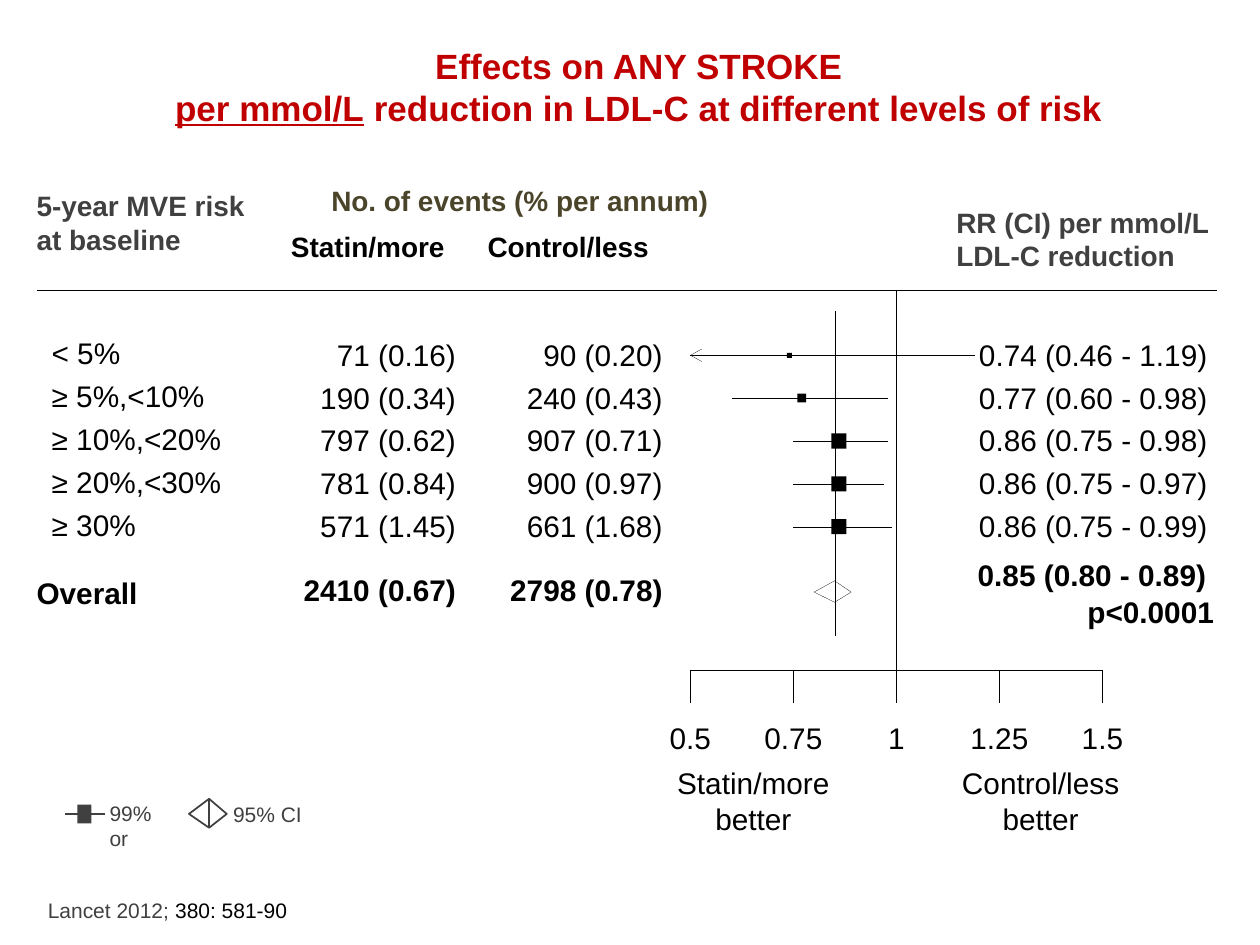
"""Build a forest plot slide on stroke risk per mmol/L LDL-C reduction."""

from dataclasses import dataclass
from typing import Optional

import pptx
import pptx.dml.color
import pptx.enum.dml
import pptx.enum.shapes
import pptx.enum.text
import pptx.oxml.ns
import pptx.util
from lxml import etree
from pptx.util import Inches

BLACK, GREY, RED, OLIVE = "000000", "404040", "C00000", "4A452A"
HAIRLINE = 0.13
LEFT = pptx.enum.text.PP_ALIGN.LEFT
CENTER = pptx.enum.text.PP_ALIGN.CENTER
RIGHT = pptx.enum.text.PP_ALIGN.RIGHT

AXIS_LEFT, AXIS_SPAN, AXIS_Y = 5.48, 3.27, 5.32
FIRST_ROW, ROW_STEP = 2.67, 0.34
HEADER_Y, OVERALL_Y = 2.3, 4.7


@dataclass
class Label:
    text: str
    left: float
    top: float
    width: float
    size: float = 17
    color: str = BLACK
    bold: bool = False
    align: pptx.enum.text.PP_ALIGN = LEFT


@dataclass
class RiskGroup:
    name: str
    statin: str
    control: str
    ratio: float
    low: float
    high: float
    marker: float


LABELS = [
    Label("5-year MVE risk\nat baseline", 0.29, 1.5, 1.9, 16, GREY, True),
    Label("No. of events (% per annum)", 2.63, 1.46, 3.2, 16, OLIVE, True),
    Label("Statin/more", 2.31, 1.82, 1.4, 16, BLACK, True),
    Label("Control/less", 3.87, 1.82, 1.4, 16, BLACK, True),
    Label("RR (CI) per mmol/L\nLDL-C reduction", 7.59, 1.63, 2.2, 16, GREY, True),
    Label("Overall", 0.29, 4.56, 1, bold=True),
    Label("2410 (0.67)", 2.12, 4.54, 1.5, bold=True, align=RIGHT),
    Label("2798 (0.78)", 3.76, 4.54, 1.5, bold=True, align=RIGHT),
    Label("0.85 (0.80 - 0.89)", 7.76, 4.42, 2, bold=True),
    Label("p<0.0001", 8.63, 4.71, 1.2, bold=True),
    Label("Statin/more\nbetter", 5.23, 6.07, 1.5, align=CENTER),
    Label("Control/less\nbetter", 7.51, 6.07, 1.5, align=CENTER),
    Label("99%\vor", 0.87, 6.35, 0.5, 12, GREY),
    Label("95% CI", 1.85, 6.36, 0.7, 12, GREY),
]

RISK_GROUPS = [
    RiskGroup("< 5%", "71 (0.16)", "90 (0.20)", 0.74, 0.46, 1.19, 0.04),
    RiskGroup("≥ 5%,<10%", "190 (0.34)", "240 (0.43)", 0.77, 0.60, 0.98, 0.07),
    RiskGroup("≥ 10%,<20%", "797 (0.62)", "907 (0.71)", 0.86, 0.75, 0.98, 0.12),
    RiskGroup("≥ 20%,<30%", "781 (0.84)", "900 (0.97)", 0.86, 0.75, 0.97, 0.12),
    RiskGroup("≥ 30%", "571 (1.45)", "661 (1.68)", 0.86, 0.75, 0.99, 0.12),
]


def rgb(color: str) -> pptx.dml.color.RGBColor:
    return pptx.dml.color.RGBColor.from_string(color)


def ratio_x(ratio: float) -> float:
    return AXIS_LEFT + (ratio - 0.5) * AXIS_SPAN


def format_run(run, size: float, color: str, bold: bool = False) -> None:
    run.font.name = "Arial"
    run.font.size = pptx.util.Pt(size)
    run.font.bold = bold
    run.font.color.rgb = rgb(color)


def draw_label(slide, label: Label):
    box = slide.shapes.add_textbox(
        Inches(label.left), Inches(label.top), Inches(label.width), Inches(0.29)
    )
    frame = box.text_frame
    frame.word_wrap = True
    frame.margin_left = frame.margin_right = frame.margin_top = frame.margin_bottom = 0
    frame.text = label.text
    for paragraph in frame.paragraphs:
        paragraph.alignment = label.align
        for run in paragraph.runs:
            format_run(run, label.size, label.color, label.bold)
    return frame


def draw_line(slide, x1: float, y1: float, x2: float, y2: float,
              color: str = BLACK, width: float = HAIRLINE):
    line = slide.shapes.add_connector(
        pptx.enum.shapes.MSO_CONNECTOR.STRAIGHT,
        Inches(x1), Inches(y1), Inches(x2), Inches(y2),
    )
    line.line.color.rgb = rgb(color)
    line.line.width = pptx.util.Pt(width)
    properties = line.element.find(pptx.oxml.ns.qn("p:spPr"))
    etree.SubElement(properties, pptx.oxml.ns.qn("a:effectLst"))
    return line


def draw_outline(slide, points: list[tuple[float, float]], closed: bool,
                 color: str = BLACK, width: float = HAIRLINE) -> None:
    corners = [(Inches(x), Inches(y)) for x, y in points]
    builder = slide.shapes.build_freeform(*corners[0])
    builder.add_line_segments(corners[1:], close=closed)
    outline = builder.convert_to_shape()
    outline.shadow.inherit = False
    outline.fill.background()
    outline.line.color.rgb = rgb(color)
    outline.line.width = pptx.util.Pt(width)


def draw_marker(slide, x: float, y: float, width: float,
                color: str = BLACK, height: Optional[float] = None) -> None:
    height = height or width
    marker = slide.shapes.add_shape(
        pptx.enum.shapes.MSO_SHAPE.RECTANGLE,
        Inches(x - width / 2), Inches(y - height / 2), Inches(width), Inches(height),
    )
    marker.shadow.inherit = False
    marker.fill.solid()
    marker.fill.fore_color.rgb = rgb(color)
    marker.line.fill.background()


def draw_title(slide) -> None:
    title = slide.shapes.title
    title.left, title.top = Inches(0.57), Inches(0.3)
    title.width, title.height = Inches(9), Inches(1.25)
    title.text_frame.vertical_anchor = pptx.enum.text.MSO_ANCHOR.TOP
    heading = title.text_frame.paragraphs[0]
    heading.text = "Effects on ANY STROKE\vper mmol/L"
    heading.alignment = CENTER
    heading.add_run().text = " reduction in LDL-C at different levels of risk"
    for run in heading.runs:
        format_run(run, 20, RED, True)
    heading.runs[1].font.underline = True


def draw_group(slide, group: RiskGroup, top: float) -> None:
    middle = top + 0.15
    estimate = f"{group.ratio:.2f} ({group.low:.2f} - {group.high:.2f})"
    draw_label(slide, Label(group.name, 0.41, top - 0.01, 1.6))
    draw_label(slide, Label(group.statin, 2.12, top, 1.5, align=RIGHT))
    draw_label(slide, Label(group.control, 3.76, top, 1.5, align=RIGHT))
    draw_label(slide, Label(estimate, 7.77, top, 2))
    start = max(ratio_x(group.low), AXIS_LEFT)
    draw_line(slide, start, middle, ratio_x(group.high), middle)
    if group.low < 0.5:
        barbs = [(start + 0.09, middle - 0.05), (start, middle), (start + 0.09, middle + 0.05)]
        draw_outline(slide, barbs, closed=False)
    draw_marker(slide, ratio_x(group.ratio), middle, group.marker)


def draw_axis(slide) -> None:
    draw_line(slide, 0.29, HEADER_Y, 9.66, HEADER_Y)
    draw_line(slide, ratio_x(1), 5.45, ratio_x(1), HEADER_Y)
    draw_line(slide, AXIS_LEFT, AXIS_Y, AXIS_LEFT + AXIS_SPAN, AXIS_Y)
    for ratio in (0.5, 0.75, 1, 1.25, 1.5):
        x = ratio_x(ratio)
        draw_line(slide, x, AXIS_Y, x, AXIS_Y + 0.26)
        draw_label(slide, Label(str(ratio), x - 0.4, 5.71, 0.8, align=CENTER))


def draw_overall(slide) -> None:
    x = ratio_x(0.85)
    diamond = [(ratio_x(0.8), OVERALL_Y), (x, OVERALL_Y - 0.09),
               (ratio_x(0.89), OVERALL_Y), (x, OVERALL_Y + 0.08)]
    draw_outline(slide, diamond, closed=True)
    overall_line = draw_line(slide, x, 2.47, x, 5.04)
    overall_line.line.dash_style = pptx.enum.dml.MSO_LINE.SQUARE_DOT


def draw_legend(slide) -> None:
    draw_marker(slide, 0.67, 6.46, 0.11, GREY, 0.15)
    draw_line(slide, 0.52, 6.46, 0.83, 6.46, GREY, 1)
    diamond = [(1.66, 6.34), (1.5, 6.46), (1.66, 6.57), (1.8, 6.46)]
    draw_outline(slide, diamond, True, GREY, 1)
    draw_line(slide, 1.66, 6.57, 1.66, 6.34, GREY, 1)


def main() -> None:
    deck = pptx.Presentation()
    deck.slide_width, deck.slide_height = Inches(10), Inches(7.5)
    slide = deck.slides.add_slide(deck.slide_layouts[5])
    draw_title(slide)
    for label in LABELS:
        draw_label(slide, label)
    draw_axis(slide)
    for index, group in enumerate(RISK_GROUPS):
        draw_group(slide, group, FIRST_ROW + index * ROW_STEP)
    draw_overall(slide)
    draw_legend(slide)
    citation = draw_label(slide, Label("Lancet 2012; ", 0.38, 7.12, 2.3, 12, GREY))
    pages = citation.paragraphs[0].add_run()
    pages.text = "380: 581-90"
    format_run(pages, 12, BLACK)
    deck.save("out.pptx")


if __name__ == "__main__":
    main()
